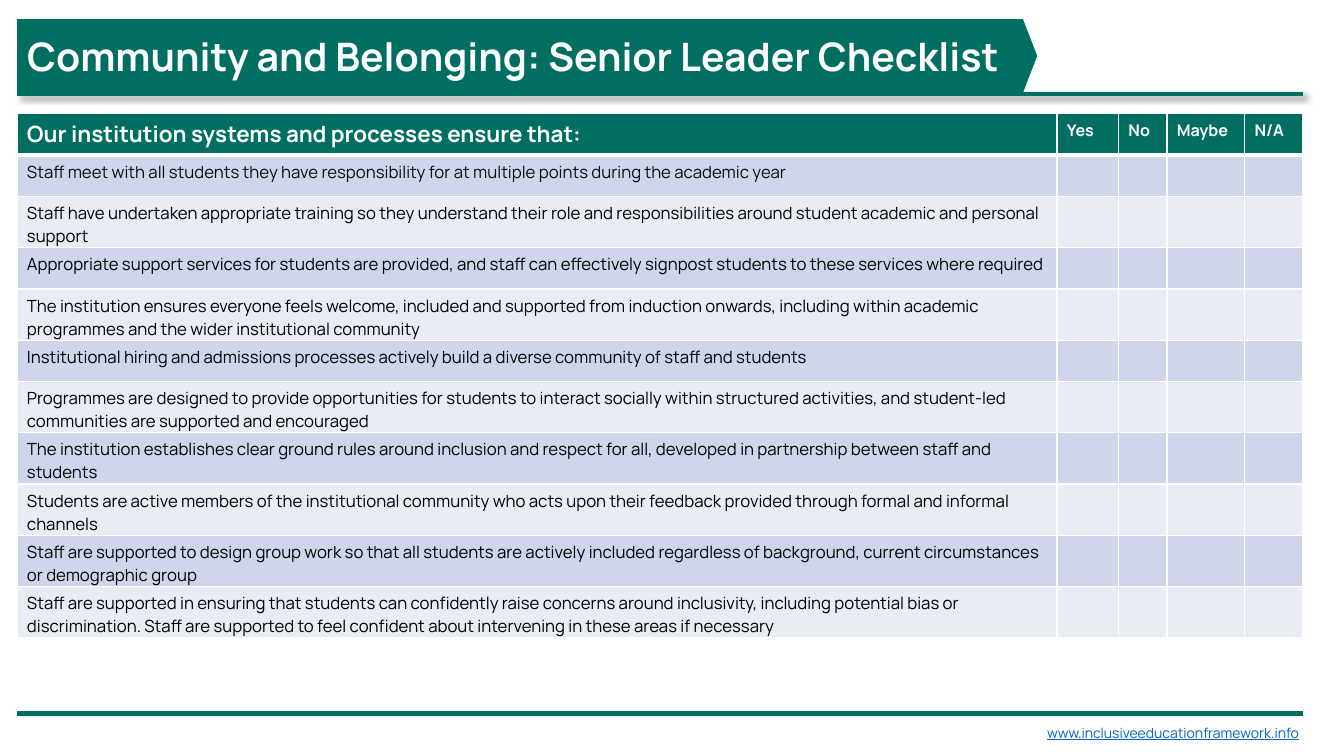
from collections import namedtuple
from dataclasses import dataclass

import lxml.etree
import pptx
import pptx.dml.color
import pptx.enum.shapes
import pptx.enum.text
import pptx.oxml
import pptx.oxml.ns
import pptx.util
from pptx.util import Cm, Pt

Box = namedtuple("Box", "left top width height")


@dataclass(frozen=True)
class Theme:
    font: str = "Manrope"
    green: str = "006E61"
    white: str = "FFFFFF"
    link: str = "0563C1"
    text: str = "000000"
    first_text: str = "0D0D0D"
    bands: tuple = ("CFD5EA", "E9EBF5")
    title_size: float = 28
    heading_size: float = 16
    answer_size: float = 11.5
    body_size: float = 12
    link_size: float = 10
    rule_width: float = 3


THEME = Theme()
ANSWERS = ("Yes", "No", "Maybe", "N/A")
ANSWER_WIDTHS = (1.55, 1.22, 1.96, 1.47)
HEADING = "Our institution systems and processes ensure that:"
STATEMENTS = (
    "Staff meet with all students they have responsibility for at multiple points during the academic year",
    "Staff have undertaken appropriate training so they understand their role and responsibilities "
    "around student academic and personal support",
    "Appropriate support services for students are provided, and staff can effectively signpost "
    "students to these services where required",
    "The institution ensures everyone feels welcome, included and supported from induction onwards, "
    "including within academic programmes and the wider institutional community",
    "Institutional hiring and admissions processes actively build a diverse community of staff and students",
    "Programmes are designed to provide opportunities for students to interact socially within "
    "structured activities, and student-led communities are supported and encouraged",
    "The institution establishes clear ground rules around inclusion and respect for all, "
    "developed in partnership between staff and students",
    "Students are active members of the institutional community who acts upon their feedback "
    "provided through formal and informal channels",
    "Staff are supported to design group work so that all students are actively included "
    "regardless of background, current circumstances or demographic group",
    "Staff are supported in ensuring that students can confidently raise concerns around inclusivity, "
    "including potential bias or discrimination. Staff are supported to feel confident about "
    "intervening in these areas if necessary",
)


def rgb(value):
    return pptx.dml.color.RGBColor.from_string(value)


def paint(item, color):
    item.fill.solid()
    item.fill.fore_color.rgb = rgb(color)


def write(frame, text, size, color, bold=False):
    para = frame.paragraphs[0]
    para.text = text
    para.alignment = pptx.enum.text.PP_ALIGN.LEFT
    para.font.name = THEME.font
    para.font.size = Pt(size)
    para.font.bold = bold
    para.font.color.rgb = rgb(color)
    return para


def add_rule(page, left, top, width):
    """Draw a green horizontal rule and return its empty effect list."""
    rule = page.shapes.add_connector(
        pptx.enum.shapes.MSO_CONNECTOR.STRAIGHT, left, top, left + width, top)
    rule.line.color.rgb = rgb(THEME.green)
    rule.line.width = Pt(THEME.rule_width)
    properties = rule.element.find(pptx.oxml.ns.qn("p:spPr"))
    return lxml.etree.SubElement(properties, pptx.oxml.ns.qn("a:effectLst"))


def add_banner(page, box):
    title_width, tip_start = Cm(25.32), Cm(20.91)
    shoulder, tip = Cm(25.35), Cm(25.71)

    # Pointed end of the banner
    builder = page.shapes.build_freeform(box.left + shoulder, box.top)
    builder.add_line_segments([
        (box.left + tip_start, box.top),
        (box.left + tip_start, box.top + box.height),
        (box.left + shoulder, box.top + box.height),
        (box.left + tip, box.top + box.height // 2),
    ])
    arrow = builder.convert_to_shape()
    arrow.shadow.inherit = False
    arrow.line.fill.background()
    paint(arrow, THEME.green)

    # Rule with a soft shadow
    effects = add_rule(page, box.left, box.top + box.height + Cm(0.02), box.width)
    effects.append(pptx.oxml.parse_xml(
        f'<a:outerShdw {pptx.oxml.ns.nsdecls("a")} blurRad="{Pt(4)}" dist="{Pt(3)}" '
        'dir="2700000" algn="tl" rotWithShape="0"><a:srgbClr val="000000">'
        '<a:alpha val="40000"/></a:srgbClr></a:outerShdw>'))

    # Title, in front of the pointed end
    title = page.shapes.title
    title.left, title.top, title.width, title.height = box._replace(width=title_width)
    paint(title, THEME.green)
    frame = title.text_frame
    frame.word_wrap = True
    frame.auto_size = pptx.enum.text.MSO_AUTO_SIZE.NONE
    frame.vertical_anchor = pptx.enum.text.MSO_ANCHOR.MIDDLE
    write(frame, "Community and Belonging: Senior Leader Checklist",
          THEME.title_size, THEME.white, bold=True)
    title.element.getparent().append(title.element)


def set_borders(cell, top, bottom):
    properties = cell._tc.get_or_add_tcPr()
    for index, (side, width) in enumerate(zip("LRTB", (1, 1, top, bottom))):
        properties.insert(index, pptx.oxml.parse_xml(
            f'<a:ln{side} {pptx.oxml.ns.nsdecls("a")} w="{Pt(width)}"><a:solidFill>'
            f'<a:srgbClr val="{THEME.white}"/></a:solidFill></a:ln{side}>'))


def add_checklist(page, box):
    rows = [(HEADING, *ANSWERS)]
    rows += [(statement, *[""] * len(ANSWERS)) for statement in STATEMENTS]
    table = page.shapes.add_table(len(rows), len(rows[0]), *box).table
    answer_widths = [Cm(width) for width in ANSWER_WIDTHS]
    widths = [box.width - sum(answer_widths), *answer_widths]
    for column, width in zip(table.columns, widths):
        column.width = width

    for r, texts in enumerate(rows):
        table.rows[r].height = box.height // len(rows)
        for c, text in enumerate(texts):
            cell = table.cell(r, c)
            cell.margin_left = cell.margin_right = Cm(0.25)
            cell.margin_top, cell.margin_bottom = Cm(0.13), 0
            if r == 0:
                size = THEME.answer_size if c else THEME.heading_size
                fill, color = THEME.green, THEME.white
            else:
                size, fill = THEME.body_size, THEME.bands[(r - 1) % 2]
                color = THEME.first_text if r == 1 else THEME.text
            write(cell.text_frame, text, size, color, bold=r == 0)
            paint(cell, fill)
            set_borders(cell, top=3 if r == 1 else 1, bottom=3 if r == 0 else 1)


def add_footer(page, box):
    add_rule(page, box.left, box.top, box.width)
    link = page.shapes.add_textbox(box.left + Cm(25.71), box.top + Cm(0.16), Cm(7.11), Cm(0.69))
    link.text_frame.word_wrap = True
    link.text_frame.auto_size = pptx.enum.text.MSO_AUTO_SIZE.SHAPE_TO_FIT_TEXT
    para = write(link.text_frame, "www.inclusiveeducationframework.info",
                 THEME.link_size, THEME.link)
    para.font.underline = True


def main():
    deck = pptx.Presentation()
    deck.slide_width, deck.slide_height = Cm(33.87), Cm(19.05)
    page = deck.slides.add_slide(deck.slide_layouts.get_by_name("Title Only"))
    left, width = Cm(0.43), Cm(32.41)
    add_checklist(page, Box(left, Cm(2.87), width, Cm(11.44)))
    add_footer(page, Box(left, Cm(17.98), width, Cm(0.85)))
    add_banner(page, Box(left, Cm(0.48), width, Cm(1.86)))
    deck.save("out.pptx")


if __name__ == "__main__":
    main()
